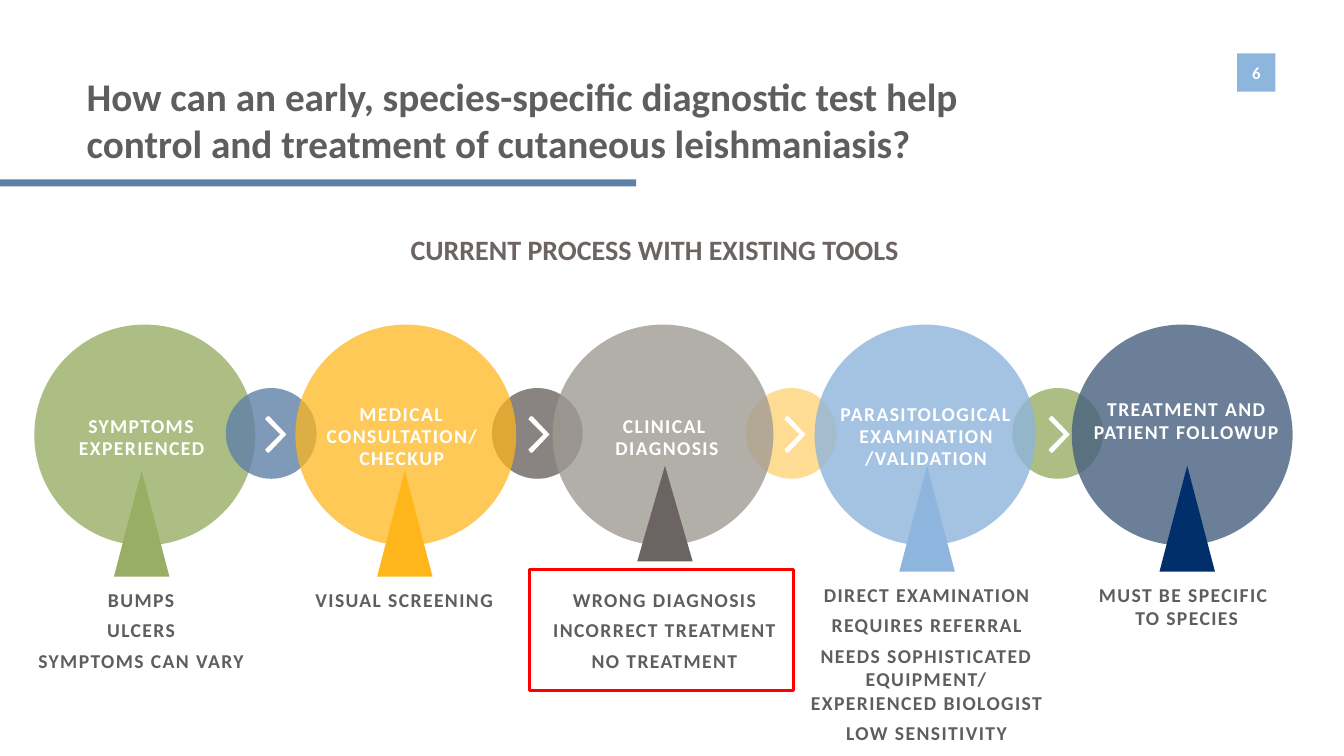
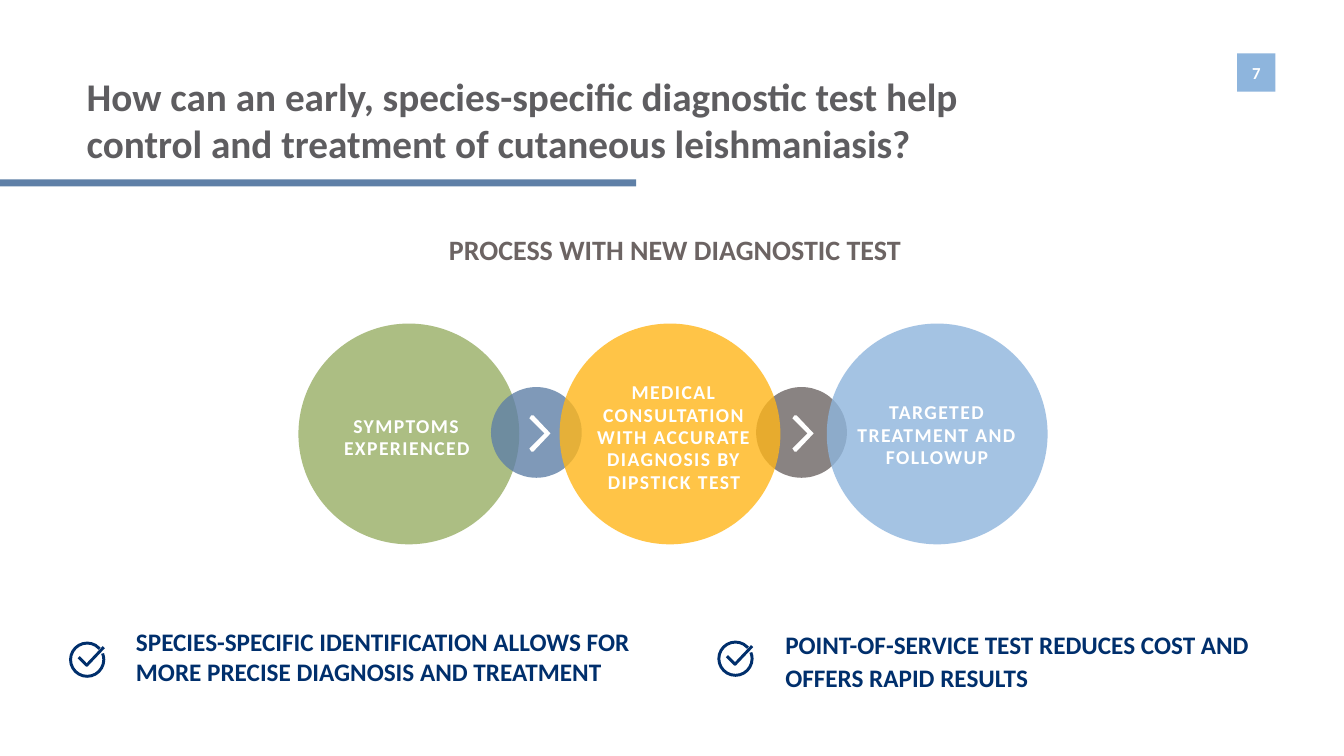
"""Build two process slides on diagnosing cutaneous leishmaniasis."""
import lxml.etree
import pptx
import pptx.dml.color
import pptx.enum.shapes
import pptx.enum.text
import pptx.oxml.ns
import pptx.util

PX = 9144
SHAPE = pptx.enum.shapes.MSO_SHAPE
ALIGN = pptx.enum.text.PP_ALIGN
ANCHOR = pptx.enum.text.MSO_ANCHOR
qn = pptx.oxml.ns.qn

GREEN, BLUE, AMBER, SKY = "98AE65", "5F80A7", "FFB61A", "8EB5DD"
BROWN, STONE, SLATE, NAVY = "6C6463", "9F9B93", "46607F", "002F6C"
SAND, GRAY, WHITE, RED = "FFD478", "5E5D60", "FFFFFF", "FF0000"

DISC, LINK, LABEL_W = 219, 90, 205
TRIANGLE_W, TRIANGLE_RISE = 55, 111
CHEVRON = [(21, 18), (4, 0), (2, 0), (0, 3), (15, 18), (0, 33), (2, 36), (4, 36)]
TICK = [(78, 652), (86, 660), (103, 642)]
RING = (70, 638, 33, 33)
RING_ANGLES = (338, 319)

TITLE = ("How can an early, species-specific diagnostic test help "
         "control and treatment of cutaneous leishmaniasis?")

STYLES = {
    "title": dict(size=28, color=GRAY),
    "page": dict(size=12, color=WHITE, para=dict(alignment=ALIGN.CENTER)),
    "heading": dict(size=20, color=BROWN, para=dict(alignment=ALIGN.CENTER)),
    "label": dict(size=14, color=WHITE, spacing=100,
                  para=dict(alignment=ALIGN.CENTER, line_spacing=0.95)),
    "note": dict(size=14, color=GRAY, spacing=100,
                 para=dict(alignment=ALIGN.CENTER, space_after=pptx.util.Pt(5))),
    "benefit": dict(size=18, color=NAVY),
    "loose benefit": dict(size=18, color=NAVY, para=dict(line_spacing=1.1)),
}

SLIDES = [
    dict(
        page="6",
        heading=("CURRENT PROCESS WITH EXISTING TOOLS", 136, 1027),
        top=322,
        stages=[
            (34, GREEN, 80, (38, 407), ["SYMPTOMS EXPERIENCED"]),
            (293, AMBER, 73, (296, 395), ["MEDICAL CONSULTATION/", "CHECKUP"]),
            (548, STONE, 80, (559, 407), ["CLINICAL ", "DIAGNOSIS"]),
            (808, SKY, 80, (816, 395), ["PARASITOLOGICAL EXAMINATION", "/VALIDATION"]),
            (1063, SLATE, 80, (1074, 391), ["TREATMENT AND", "PATIENT FOLLOWUP"]),
        ],
        links=[(224, BLUE, 39), (488, BROWN, 36), (740, SAND, 38), (1004, GREEN, 36)],
        notes=[
            (17, 578, 246, 105, GREEN, ["BUMPS", "ULCERS", "SYMPTOMS CAN VARY"]),
            (278, 578, 246, 105, AMBER, ["VISUAL SCREENING"]),
            (530, 578, 258, 95, BROWN,
             ["WRONG DIAGNOSIS", "INCORRECT TREATMENT", "NO TREATMENT"]),
            (788, 573, 262, 105, SKY,
             ["DIRECT EXAMINATION", "REQUIRES REFERRAL",
              "NEEDS SOPHISTICATED EQUIPMENT/\vEXPERIENCED BIOLOGIST",
              "LOW SENSITIVITY"]),
            (1054, 573, 246, 105, NAVY, ["MUST BE SPECIFIC \vTO SPECIES"]),
        ],
        warnings=[(525, 565, 262, 120)],
        benefits=[],
    ),
    dict(
        page="7",
        heading=("PROCESS WITH NEW DIAGNOSTIC TEST", 175, 989),
        top=321,
        stages=[
            (296, GREEN, 80, (301, 407), ["SYMPTOMS EXPERIENCED"]),
            (555, AMBER, 80, (566, 374),
             ["MEDICAL CONSULTATION WITH ACCURATE DIAGNOSIS BY DIPSTICK TEST"]),
            (820, SKY, 80, (827, 394), ["TARGETED TREATMENT AND FOLLOWUP"]),
        ],
        links=[(487, BLUE, 38), (750, BROWN, 36)],
        notes=[],
        warnings=[],
        benefits=[
            ((125, 616, 565, 71), "benefit", (0, 0),
             "SPECIES-SPECIFIC IDENTIFICATION ALLOWS FOR MORE PRECISE DIAGNOSIS AND TREATMENT"),
            ((769, 616, 537, 77), "loose benefit", (643, -1),
             "POINT-OF-SERVICE TEST REDUCES COST AND OFFERS RAPID RESULTS"),
        ],
    ),
]


def rgb(color):
    return pptx.dml.color.RGBColor.from_string(color)


def emu(box):
    return [v * PX for v in box]


def paint(sp, fill=None, line=None, width=1, alpha=100):
    sp.shadow.inherit = False
    if fill:
        sp.fill.solid()
        sp.fill.fore_color.rgb = rgb(fill)
        if alpha < 100:
            clr = sp.fill._xPr.find(qn("a:solidFill"))[0]
            lxml.etree.SubElement(clr, qn("a:alpha"), val=str(alpha * 1000))
    else:
        sp.fill.background()
    if line:
        sp.line.color.rgb = rgb(line)
        sp.line.width = pptx.util.Pt(width)
    else:
        sp.line.fill.background()
    return sp


def add_shape(s, kind, box, **look):
    return paint(s.shapes.add_shape(kind, *emu(box)), **look)


def add_path(s, points, dx, dy, close, **look):
    pts = [(x + dx, y + dy) for x, y in points]
    fb = s.shapes.build_freeform(*pts[0], scale=PX)
    fb.add_line_segments(pts[1:], close=close)
    return paint(fb.convert_to_shape(), **look)


def write(sp, lines, style, anchor=ANCHOR.TOP, wrap=True):
    fmt = STYLES[style]
    tf = sp.text_frame
    tf.word_wrap = wrap
    tf.vertical_anchor = anchor
    for i, line in enumerate(lines):
        p = tf.add_paragraph() if i else tf.paragraphs[0]
        p.text = line
        for name, value in fmt.get("para", dict(alignment=ALIGN.LEFT)).items():
            setattr(p, name, value)
        for br in p._p.findall(qn("a:br")):
            lxml.etree.SubElement(br, qn("a:rPr"), sz=str(fmt["size"] * 100))
        for r in p.runs:
            font = dict(name="Calibri", size=pptx.util.Pt(fmt["size"]), bold=True)
            for name, value in font.items():
                setattr(r.font, name, value)
            r.font.color.rgb = rgb(fmt["color"])
            if "spacing" in fmt:
                r._r.get_or_add_rPr().set("spc", str(fmt["spacing"]))


def add_text(s, box, lines, style):
    write(s.shapes.add_textbox(*emu(box)), lines, style)


def add_frame(s, page, heading):
    number = add_shape(s, SHAPE.RECTANGLE, (1227, 53, 38, 38), fill=SKY)
    write(number, [page], "page", ANCHOR.MIDDLE, wrap=False)
    add_shape(s, SHAPE.RECTANGLE, (0, 178, 631, 7), fill=BLUE)
    title = s.shapes.title
    title.left, title.top, title.width, title.height = emu((76, 67, 989, 104))
    write(title, [TITLE], "title")
    text, x, w = heading
    add_text(s, (x, 226, w, 44), [text], "heading")


def add_stage(s, top, x, color, alpha, label_at, lines):
    add_shape(s, SHAPE.OVAL, (x, top, DISC, DISC), fill=color, alpha=alpha)
    add_text(s, (*label_at, LABEL_W, 22 * len(lines) + 11), lines, "label")


def add_link(s, top, x, color, chevron_dx):
    y = top + 63
    add_shape(s, SHAPE.OVAL, (x, y, LINK, LINK), fill=color, alpha=80)
    add_path(s, CHEVRON, x + chevron_dx, y + 28, True, fill=WHITE)


def add_note(s, x, y, w, height, color, lines):
    left = x + w // 2 - TRIANGLE_W // 2
    add_shape(s, SHAPE.ISOSCELES_TRIANGLE,
              (left, y - TRIANGLE_RISE + (-5 if height < 105 else 0), TRIANGLE_W, height),
              fill=color)
    add_text(s, (x, y, w, 30 * len(lines) + 5), lines, "note")


def add_benefit(s, box, style, offset, text):
    add_text(s, box, [text], style)
    dx, dy = offset
    x, y, w, h = RING
    ring = add_shape(s, SHAPE.ARC, (x + dx, y + dy, w, h), line=NAVY, width=2.1)
    for i, angle in enumerate(RING_ANGLES):
        ring.adjustments[i] = angle * 0.6
    add_path(s, TICK, dx, dy, False, line=NAVY, width=2.1)


def main():
    prs = pptx.Presentation()
    prs.slide_width, prs.slide_height = emu((1333, 750))
    for data in SLIDES:
        s = prs.slides.add_slide(prs.slide_layouts[5])
        add_frame(s, data["page"], data["heading"])
        first, *others = data["stages"]
        add_stage(s, data["top"], *first)
        for link in data["links"]:
            add_link(s, data["top"], *link)
        for stage in others:
            add_stage(s, data["top"], *stage)
        for note in data["notes"]:
            add_note(s, *note)
        for box in data["warnings"]:
            add_shape(s, SHAPE.RECTANGLE, box, line=RED, width=2.25)
        for benefit in data["benefits"]:
            add_benefit(s, *benefit)
    prs.save("out.pptx")


if __name__ == "__main__":
    main()
